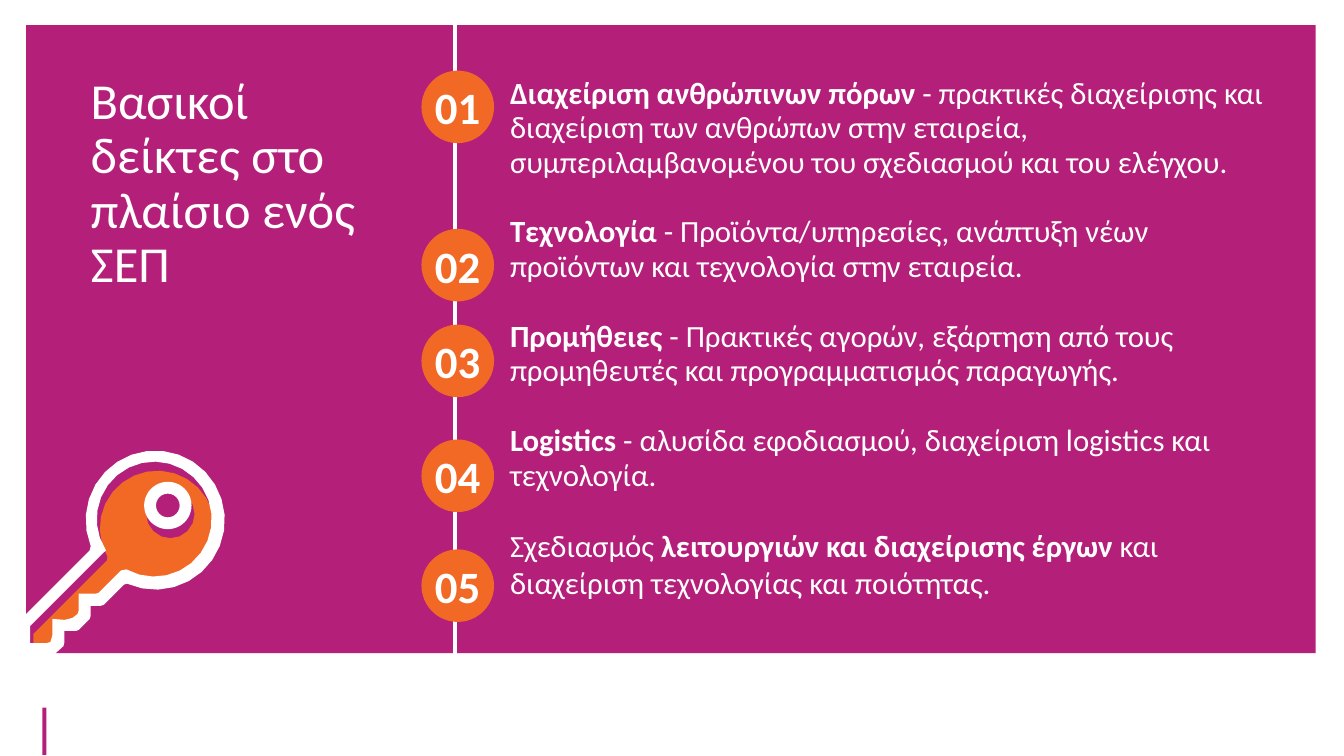
"""Build the slide of five key indicators along a vertical timeline."""
from math import cos, radians, sin

from lxml.etree import SubElement
from pptx import Presentation
from pptx.dml.color import RGBColor
from pptx.enum.shapes import MSO_CONNECTOR, MSO_SHAPE
from pptx.enum.text import MSO_ANCHOR, MSO_AUTO_SIZE, PP_ALIGN
from pptx.oxml.ns import qn
from pptx.util import Inches, Pt

MAGENTA, ORANGE, WHITE = "B41F7A", "F16924", "FFFFFF"
AXIS, TOP, CIRCLE = 4.51, 0.7, 0.72

INDICATORS = [
    (0.7, [("Διαχείριση ανθρώπινων πόρων ", True),
           ("- πρακτικές διαχείρισης και διαχείριση των ανθρώπων στην εταιρεία, "
            "συμπεριλαμβανομένου του σχεδιασμού και του ελέγχου.", False)]),
    (2.27, [("Τεχνολογία ", True),
            ("- Προϊόντα/υπηρεσίες, ανάπτυξη νέων προϊόντων και τεχνολογία "
             "στην εταιρεία.", False)]),
    (3.22, [("Προμήθειες ", True),
            ("- Πρακτικές αγορών, εξάρτηση από τους προμηθευτές και "
             "προγραμματισμός παραγωγής.", False)]),
    (4.36, [("Logistics ", True),
            ("- αλυσίδα εφοδιασμού, διαχείριση logistics και τεχνολογία.", False)]),
    (5.45, [("Σχεδιασμός ", False),
            ("λειτουργιών και διαχείρισης έργων ", True),
            ("και διαχείριση τεχνολογίας και ποιότητας.", False)]),
]


def paint(shape, color):
    shape.shadow.inherit = False
    shape.fill.solid()
    shape.fill.fore_color.rgb = RGBColor.from_string(color)
    shape.line.fill.background()
    return shape


def arc(center_x, center_y, radius, start, end, steps=24):
    angles = [radians(start + (end - start) * step / steps) for step in range(steps + 1)]
    return [(center_x + radius * cos(angle), center_y + radius * sin(angle))
            for angle in angles]


deck = Presentation()
deck.slide_width, deck.slide_height = Inches(13.33), Inches(7.5)
page = deck.slides.add_slide(deck.slide_layouts[5])
shapes = page.shapes

for left, top, width, height in [(0.26, 0.25, 12.79, 6.23), (0.42, 7.02, 0.04, 0.47)]:
    paint(shapes.add_shape(MSO_SHAPE.RECTANGLE, Inches(left), Inches(top),
                           Inches(width), Inches(height)), MAGENTA)

title = shapes.title
title.left, title.top, title.width, title.height = map(Inches, (0.8, TOP, 3.12, 3.05))
shapes._spTree.append(title._element)
frame = title.text_frame
frame.text = "Βασικοί δείκτες στο πλαίσιο ενός ΣΕΠ"
frame.word_wrap = True
frame.auto_size = MSO_AUTO_SIZE.NONE
frame.vertical_anchor = MSO_ANCHOR.TOP
para = frame.paragraphs[0]
para.alignment = PP_ALIGN.LEFT
para.line_spacing = 0.9
para.font.name, para.font.size = "Calibri", Pt(36)
para.font.color.rgb = RGBColor.from_string(WHITE)

box = shapes.add_textbox(Inches(AXIS), Inches(TOP), Inches(8.28), Inches(6.8))
frame = box.text_frame
frame.word_wrap = True
for index, (_, spans) in enumerate(INDICATORS):
    para = frame.paragraphs[0] if index == 0 else frame.add_paragraph()
    para._p.get_or_add_pPr().set("marL", str(Inches(0.45)))
    if index > 0:
        para.space_before = Pt(24.8)
    if index < len(INDICATORS) - 1:
        para.line_spacing = Pt(24.8)
    para.font.name, para.font.size = "Calibri", Pt(22)
    para.font.color.rgb = RGBColor.from_string(WHITE)
    for text, bold in spans:
        span = para.add_run()
        span.text = text
        span.font.bold = bold

axis = shapes.add_connector(MSO_CONNECTOR.STRAIGHT, Inches(AXIS), Inches(0.22),
                            Inches(AXIS), Inches(6.49))
axis.line.color.rgb = RGBColor.from_string(WHITE)
axis.line.width = Pt(3)
SubElement(axis._element.spPr, qn("a:effectLst"))

for number, (top, _) in enumerate(INDICATORS, 1):
    badge = paint(shapes.add_shape(MSO_SHAPE.OVAL, Inches(4.18), Inches(top),
                                   Inches(CIRCLE), Inches(CIRCLE)), ORANGE)
    frame = badge.text_frame
    frame.text = f"{number:02d}"
    frame.word_wrap = False
    frame.margin_left = frame.margin_right = frame.margin_top = frame.margin_bottom = 0
    frame.vertical_anchor = MSO_ANCHOR.MIDDLE
    para = frame.paragraphs[0]
    para.alignment = PP_ALIGN.CENTER
    para.font.name, para.font.size, para.font.bold = "Calibri", Pt(32), True
    para.font.color.rgb = RGBColor.from_string(WHITE)

key_body = arc(1.56, 5.24, 0.57, 150, 480) + [
    (1.23, 5.74), (1.01, 5.96), (0.98, 5.97), (0.81, 5.97), (0.81, 6.14), (0.77, 6.21),
    (0.67, 6.23), (0.55, 6.22), (0.55, 6.38), (0.52, 6.45), (0.48, 6.46), (0.33, 6.46),
    (0.33, 6.29), (1.06, 5.56)]
key_hole = arc(1.69, 5.1, 0.24, 360, 0, 16)
outer_edge = arc(1.54, 5.16, 0.69, 158, 474) + [
    (1.23, 5.8), (1.03, 6), (1, 6.01), (0.9, 6.01), (0.9, 6.11), (0.89, 6.14),
    (0.78, 6.25), (0.75, 6.26), (0.64, 6.26), (0.64, 6.37), (0.63, 6.41), (0.53, 6.5),
    (0.19, 6.5), (0.19, 6.16), (0.89, 5.46)]
inner_edge = [(1.03, 5.48), (0.32, 6.19), (0.3, 6.21), (0.3, 6.38), (0.46, 6.38),
              (0.5, 6.37), (0.52, 6.3), (0.52, 6.14), (0.64, 6.15), (0.72, 6.13),
              (0.77, 6.09), (0.78, 6.06), (0.78, 5.89), (0.95, 5.89), (0.98, 5.88),
              (1.2, 5.66)] + arc(1.53, 5.15, 0.57, 479, 147)

for color, contours in [(ORANGE, (key_body, key_hole)), (WHITE, (outer_edge, inner_edge))]:
    outside, inside = [[(Inches(x), Inches(y)) for x, y in contour] for contour in contours]
    builder = shapes.build_freeform(*outside[0])
    builder.add_line_segments(outside[1:])
    builder.move_to(*inside[0])
    builder.add_line_segments(inside[1:])
    paint(builder.convert_to_shape(), color)

key_ring = paint(shapes.add_shape(MSO_SHAPE.DONUT, Inches(1.43), Inches(4.78),
                                  Inches(0.47), Inches(0.47)), WHITE)
key_ring.adjustments[0] = 0.25

deck.save("out.pptx")
